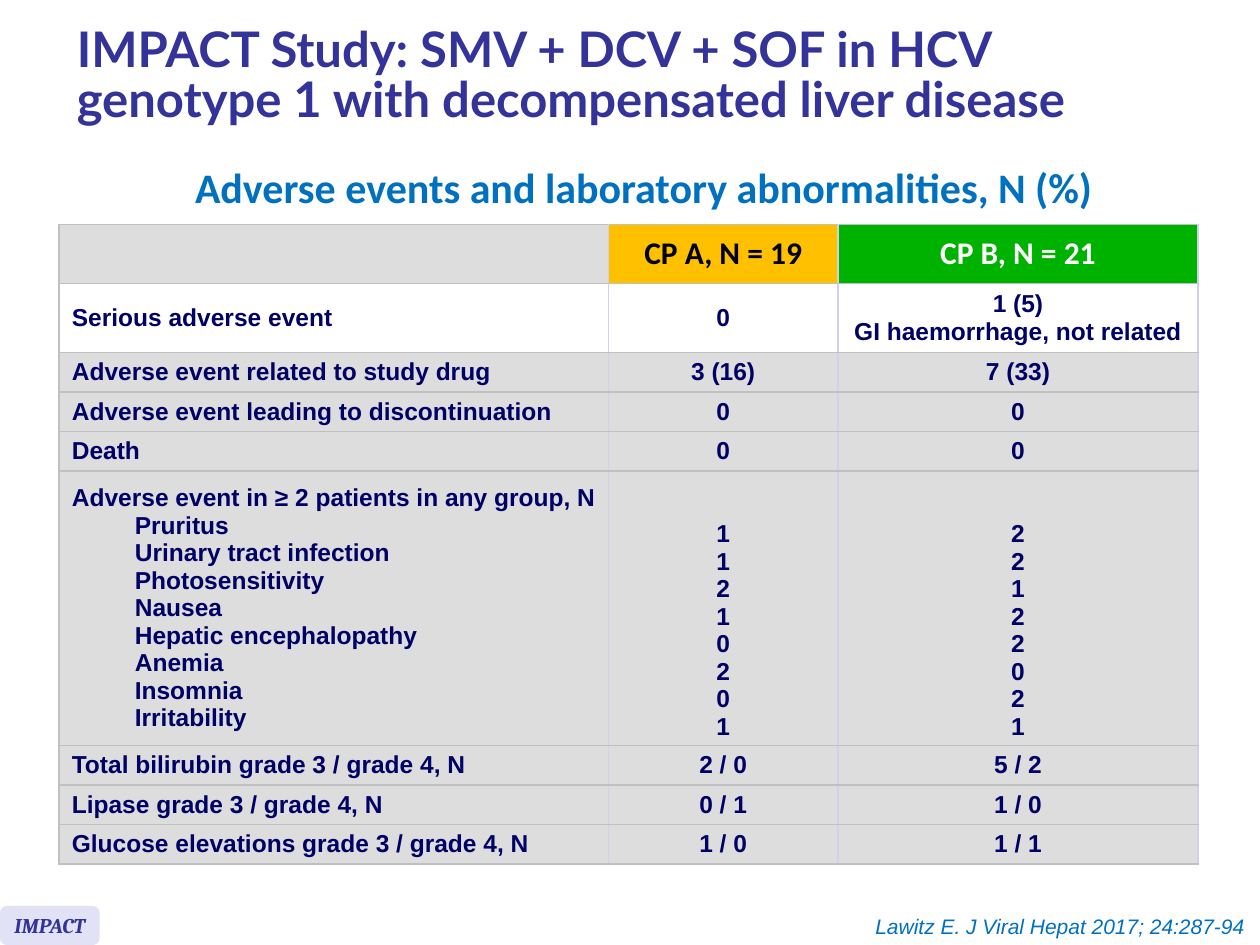
from lxml.etree import SubElement
from pptx import Presentation
from pptx.dml.color import RGBColor
from pptx.enum.shapes import MSO_SHAPE as Shape
from pptx.enum.text import MSO_ANCHOR as Anchor, MSO_AUTO_SIZE as Fit, PP_ALIGN as Align
from pptx.oxml.ns import qn
from pptx.util import Inches, Pt

WIDE, HIGH = 10, 7.5
GREY, LILAC, PALE = "C0C0C0", "D0D0F0", "DDDDDD"
NAVY, BLUE, INDIGO = "000066", "0070C0", "333399"
COLS = [4.36, 1.82, 2.86]
HEAD, LEAST, PAD = 0.47, 0.23, 0.04

EVENTS = [
    ("Pruritus", 1, 2),
    ("Urinary tract infection", 1, 2),
    ("Photosensitivity", 2, 1),
    ("Nausea", 1, 2),
    ("Hepatic encephalopathy", 0, 2),
    ("Anemia", 2, 0),
    ("Insomnia", 0, 2),
    ("Irritability", 1, 1),
]
NAMES, CP_A, CP_B = ("\n".join(map(str, part)) for part in zip(*EVENTS))
ROWS = [
    ("Serious adverse event", "0", "1 (5)\nGI haemorrhage, not related"),
    ("Adverse event related to study drug", "3 (16)", "7 (33)"),
    ("Adverse event leading to discontinuation", "0", "0"),
    ("Death", "0", "0"),
    ("Adverse event in ≥ 2 patients in any group, N\n" + NAMES, CP_A, CP_B),
    ("Total bilirubin grade 3 / grade 4, N", "2 / 0", "5 / 2"),
    ("Lipase grade 3 / grade 4, N", "0 / 1", "1 / 0"),
    ("Glucose elevations grade 3 / grade 4, N", "1 / 0", "1 / 1"),
]


def color(code):
    return RGBColor.from_string(code)


def paint(item, code):
    item.fill.solid()
    item.fill.fore_color.rgb = color(code)


def share(*box):
    """Turn left, top, width and height in percent of the slide into lengths."""
    return [Inches(part * side / 100) for part, side in zip(box, (WIDE, HIGH) * 2)]


def write(frame, text, font="Arial", size=14, ink=NAVY, bold=True, slant=False,
          align=Align.LEFT, space=None, indent=0):
    """Fill a frame; lines after the first take the indent."""
    for i, line in enumerate(text.split("\n")):
        para = frame.add_paragraph() if i else frame.paragraphs[0]
        para.alignment = align
        if space:
            para.line_spacing = space
        if i and indent:
            para._p.get_or_add_pPr().set("marL", str(Inches(indent)))
        run = para.add_run()
        run.text = line
        face = run.font
        face.name, face.size, face.bold, face.italic = font, Pt(size), bold, slant
        face.color.rgb = color(ink)


def title(slide, box, text):
    head = slide.shapes.title
    head.left, head.top, head.width, head.height = share(*box)
    frame = head.text_frame
    frame.auto_size, frame.vertical_anchor = Fit.NONE, Anchor.MIDDLE
    write(frame, text, font="Lato", size=28, ink=INDIGO, space=0.85)


def label(slide, box, text, **form):
    frame = slide.shapes.add_textbox(*share(*box)).text_frame
    frame.word_wrap = False
    write(frame, text, ink=BLUE, **form)


def badge(slide, box, text):
    tag = slide.shapes.add_shape(Shape.ROUNDED_RECTANGLE, *share(*box))
    tag.shadow.inherit = False
    paint(tag, "E2E2F6")
    tag.line.fill.background()
    frame = tag.text_frame
    frame.word_wrap, frame.vertical_anchor = False, Anchor.MIDDLE
    write(frame, text, font="Cambria", size=12, ink=INDIGO, slant=True)


def edge(cell, first):
    props = cell._tc.get_or_add_tcPr()
    codes = {"L": GREY if first else LILAC, "R": LILAC, "T": GREY, "B": GREY}
    for spot, (side, code) in enumerate(codes.items()):
        line = SubElement(props, qn("a:ln" + side), w=str(Pt(1)))
        fill = SubElement(line, qn("a:solidFill"))
        SubElement(fill, qn("a:srgbClr"), val=code)
        props.insert(spot, line)


def style(cell, fill, first):
    paint(cell, fill)
    edge(cell, first)
    cell.vertical_anchor = Anchor.MIDDLE
    cell.margin_left = cell.margin_right = Inches(0.1)
    cell.margin_top = cell.margin_bottom = Inches(PAD)


def results(slide, box):
    """Place the table; each body row grows from the least height to fit its text."""
    grid = slide.shapes.add_table(len(ROWS) + 1, len(COLS), *share(*box)).table
    grid.first_row = grid.horz_banding = False
    for col, width in zip(grid.columns, COLS):
        col.width = Inches(width)

    grid.rows[0].height = Inches(HEAD)
    heads = [("", PALE, NAVY), ("CP A, N = 19", "FFC000", "000000"),
             ("CP B, N = 21", "00B200", "FFFFFF")]
    for c, (text, fill, ink) in enumerate(heads):
        cell = grid.cell(0, c)
        style(cell, fill, c == 0)
        if text:
            write(cell.text_frame, text, font="Calibri", size=18, ink=ink, align=Align.CENTER)

    for r, row in enumerate(ROWS, 1):
        grid.rows[r].height = Inches(LEAST)
        lines = [text.count("\n") for text in row]
        for c, text in enumerate(row):
            cell = grid.cell(r, c)
            style(cell, "FFFFFF" if r == 1 else PALE, c == 0)
            if 0 < lines[c] < lines[0]:
                cell.vertical_anchor = Anchor.BOTTOM
            write(cell.text_frame, text, indent=0 if c else 0.5,
                  align=Align.CENTER if c else Align.LEFT)


def main():
    deck = Presentation()
    deck.slide_width, deck.slide_height = Inches(WIDE), Inches(HIGH)
    slide = deck.slides.add_slide(deck.slide_layouts[5])
    label(slide, (14.3, 16.4, 73.6, 6.67), "Adverse events and laboratory abnormalities, N (%)",
          font="Calibri", size=24, align=Align.CENTER)
    title(slide, (5.1, 1.1, 87.4, 14.27),
          "IMPACT Study: SMV + DCV + SOF in HCV genotype 1 with decompensated liver disease")
    results(slide, (4.7, 23.73, 90.4, 64.4))
    badge(slide, (0, 95.87, 7.9, 4.13), "IMPACT")
    label(slide, (68.2, 96, 31.6, 4), "Lawitz E. J Viral Hepat 2017; 24:287-94",
          size=12, bold=False, slant=True, align=Align.RIGHT)
    deck.save("out.pptx")


if __name__ == "__main__":
    main()
